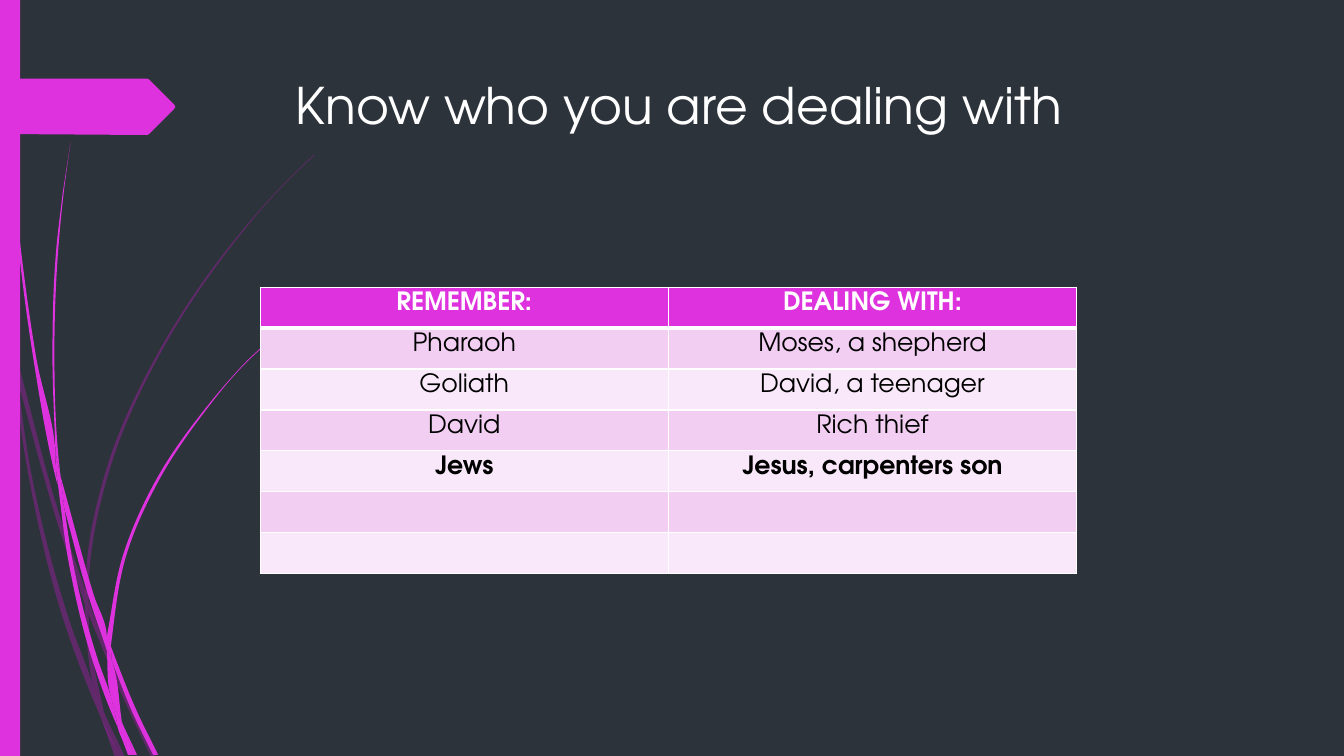
from math import dist
from lxml.etree import SubElement as Sub
from pptx import Presentation
from pptx.dml.color import RGBColor
from pptx.enum.shapes import MSO_SHAPE as Form
from pptx.enum.text import MSO_ANCHOR as Anchor, MSO_AUTO_SIZE as Fit, PP_ALIGN as Align
from pptx.oxml.ns import qn
from pptx.util import Pt

FONT = "TeX Gyre Adventor"
DARK = RGBColor(0x2C, 0x33, 0x3A)
PINK = RGBColor(0xDE, 0x32, 0xDE)
PLUM = RGBColor(0xB0, 0x1C, 0xB0)
ROSE = RGBColor(0xF2, 0xCE, 0xF2)
PALE = RGBColor(0xF9, 0xE8, 0xF9)
WHITE = RGBColor(0xFF, 0xFF, 0xFF)
BLACK = RGBColor(0, 0, 0)

WIDE, HIGH = 960, 540
GRID = 0.72  # points per step of the outline grid

# Each blade has two smooth sides, given on the grid and joined by straight lines
DIM = [
    ([(11, 350), (9, 322), (0, 282)], [(0, 299), (10, 344)]),
    ([(17, 376), (58, 522), (84, 599)], [(85, 586), (62, 520), (14, 345)]),
    ([(88, 610), (123, 694), (150, 751)], [(155, 751), (127, 692), (92, 607), (88, 596)]),
    ([(105, 711), (119, 751)], [(124, 751)]),
    ([(11, 350), (28, 470), (65, 621), (92, 693), (101, 714)],
     [(99, 707), (93, 683), (70, 619), (31, 469), (17, 376)]),
    ([(84, 599), (87, 646), (93, 683), (96, 692), (105, 711)],
     [(103, 706), (91, 646), (88, 610), (88, 608)]),
    ([(88, 596), (88, 584), (110, 462), (160, 349), (229, 245), (268, 198), (290, 175),
      (312, 154)],
     [(312, 153), (289, 175), (268, 197), (228, 244), (158, 348), (107, 461), (85, 584),
      (85, 586)]),
    ([(101, 714), (114, 751)], [(119, 751)]),
    ([(88, 608), (88, 610)], [(88, 596), (85, 586), (84, 599)]),
    ([(93, 683), (99, 707), (101, 714), (119, 751)], [(105, 711), (96, 692)]),
]
VIVID = [
    ([(3, 0), (4, 48), (7, 110), (17, 233), (33, 355), (56, 477), (57, 481)],
     [(55, 457), (55, 453), (36, 355), (19, 232), (8, 109), (5, 48), (4, 0)]),
    ([(64, 505), (88, 592), (106, 645)], [(106, 633), (106, 631), (93, 590), (60, 472)]),
    ([(111, 656), (132, 708), (152, 749)], [(157, 749), (136, 706), (113, 649), (110, 641)]),
    ([(57, 477), (68, 557), (93, 659), (111, 708), (117, 722)],
     [(116, 717), (110, 691), (98, 657), (72, 556), (64, 505)]),
    ([(60, 472), (58, 453), (54, 349), (58, 245), (63, 193), (70, 141)],
     [(62, 193), (56, 245), (52, 349), (55, 449)]),
    ([(122, 719), (133, 749)], [(136, 749)]),
    ([(55, 449), (55, 453), (57, 477), (64, 505)], [(60, 472)]),
    ([(110, 641), (111, 633), (125, 552), (158, 476), (205, 406), (231, 374), (245, 359),
      (261, 344)],
     [(260, 344), (245, 358), (231, 373), (204, 405), (156, 474), (122, 551), (106, 631)]),
    ([(117, 722), (127, 749)], [(131, 749)]),
    ([(106, 645), (110, 691), (116, 706), (122, 719)], [(121, 716), (111, 656), (109, 651)]),
    ([(106, 645), (109, 651), (111, 656)], [(110, 641), (106, 631), (106, 633)]),
    ([(110, 691), (116, 717), (117, 722), (130, 749)], [(133, 749), (122, 719), (116, 706)]),
]
# The tag has straight edges only, so each corner stands alone
TAG = [[node] for node in [(0, 78), (146, 78), (148, 79), (173, 104), (174, 106),
                           (173, 108), (148, 133), (146, 134), (0, 133)]]

ROWS = [
    ("REMEMBER:", "DEALING WITH:"),
    ("Pharaoh", "Moses, a shepherd"),
    ("Goliath", "David, a teenager"),
    ("David", "Rich thief"),
    ("Jews", "Jesus, carpenters son"),
    ("", ""),
    ("", ""),
]


def write(frame, text, size=18, color=BLACK, bold=False, align=Align.CENTER):
    para = frame.paragraphs[0]
    para.alignment = align
    para.font.size = Pt(size)
    if not text:
        return
    run = para.add_run()
    run.text = text
    font = run.font
    font.name, font.size, font.bold = FONT, Pt(size), bold
    font.color.rgb = color


def paint(shape, color, alpha=100):
    shape.shadow.inherit = False
    shape.fill.solid()
    shape.fill.fore_color.rgb = color
    shape.line.fill.background()
    if alpha < 100:
        tint = shape.fill._xPr.find(".//" + qn("a:srgbClr"))
        Sub(tint, qn("a:alpha"), val=str(alpha * 1000))


def slopes(side):
    """Direction at each node of a side, weighted by the chord lengths."""
    gaps = [dist(a, b) for a, b in zip(side, side[1:])]
    rates = [((c - a) / g, (d - b) / g)
             for (a, b), (c, d), g in zip(side, side[1:], gaps)]
    inner = [tuple((p * h + q * g) / (g + h) for p, q in zip(u, v))
             for u, v, g, h in zip(rates, rates[1:], gaps, gaps[1:])]
    return [rates[0], *inner, rates[-1]]


def bend(line, a, b, u, v):
    """Turn a straight step from a to b into a curve with end slopes u and v."""
    third = dist(a, b) / 3
    line.tag = qn("a:cubicBezTo")
    end = line[0]
    for (x, y), (p, q), reach in ((a, u, third), (b, v, -third)):
        end.addprevious(end.makeelement(qn("a:pt"), {
            "x": str(round(x + p * reach)), "y": str(round(y + q * reach))}))


def draw_shape(shapes, sides, color, alpha=100):
    sides = [[(Pt(x * GRID), Pt(y * GRID)) for x, y in side] for side in sides]
    nodes = sum(sides, [])
    pen = shapes.build_freeform(*nodes[0], scale=1)
    pen.add_line_segments(nodes[1:], close=True)
    shape = pen.convert_to_shape()
    lines = list(shape._element.iter(qn("a:lnTo")))
    left, top = min(x for x, _ in nodes), min(y for _, y in nodes)
    first = 0
    for side in sides:
        if len(side) > 2:
            local = [(x - left, y - top) for x, y in side]
            turns = slopes(local)
            for i in range(len(side) - 1):
                bend(lines[first + i], *local[i:i + 2], *turns[i:i + 2])
        first += len(side)
    paint(shape, color, alpha)


def draw_side(slide, high):
    # Curved blades
    for blades, color, alpha in ((DIM, PLUM, 40), (VIVID, PINK, 100)):
        group = slide.shapes.add_group_shape()
        for sides in blades:
            draw_shape(group.shapes, sides, color, alpha)
    # Left bar and arrow tag
    bar = slide.shapes.add_shape(Form.RECTANGLE, 0, 0, Pt(14.4), Pt(high))
    paint(bar, PINK)
    draw_shape(slide.shapes, TAG, PINK)


def draw_title(slide, text, x, y, w, h):
    title = slide.shapes.title
    title.left, title.top, title.width, title.height = Pt(x), Pt(y), Pt(w), Pt(h)
    frame = title.text_frame
    frame.word_wrap, frame.auto_size = True, Fit.NONE
    frame.vertical_anchor = Anchor.TOP
    write(frame, text, size=36, color=WHITE, align=Align.LEFT)


def add_edge(cell, side, width):
    line = Sub(cell._tc.get_or_add_tcPr(), qn("a:ln" + side), w=str(Pt(width)))
    Sub(Sub(line, qn("a:solidFill")), qn("a:srgbClr"), val=str(WHITE))


def draw_table(slide, rows, x, y, w, h):
    count, cols = len(rows), len(rows[0])
    table = slide.shapes.add_table(count, cols, Pt(x), Pt(y), Pt(w), Pt(h)).table
    for col in table.columns:
        col.width = Pt(w / cols)
    for i, row in enumerate(rows):
        table.rows[i].height = Pt(h / count)
        head = i == 0
        for j, text in enumerate(row):
            cell = table.cell(i, j)
            # Borders precede the fill; the header has a thick rule below it
            for edge in "LRTB":
                add_edge(cell, edge, 3 if (i, edge) in ((0, "B"), (1, "T")) else 1)
            cell.fill.solid()
            cell.fill.fore_color.rgb = PINK if head else ROSE if i % 2 else PALE
            write(cell.text_frame, text, color=WHITE if head else BLACK,
                  bold=head or row[0] == "Jews")


def main():
    deck = Presentation()
    deck.slide_width, deck.slide_height = Pt(WIDE), Pt(HIGH)
    slide = deck.slides.add_slide(deck.slide_layouts[5])
    back = slide.background.fill
    back.solid()
    back.fore_color.rgb = DARK
    draw_side(slide, HIGH)
    draw_title(slide, "Know who you are dealing with", 204, 49, 702, 100.8)
    draw_table(slide, ROWS, 185.8, 205.2, 583.2, 204.4)
    deck.save("out.pptx")


if __name__ == "__main__":
    main()
